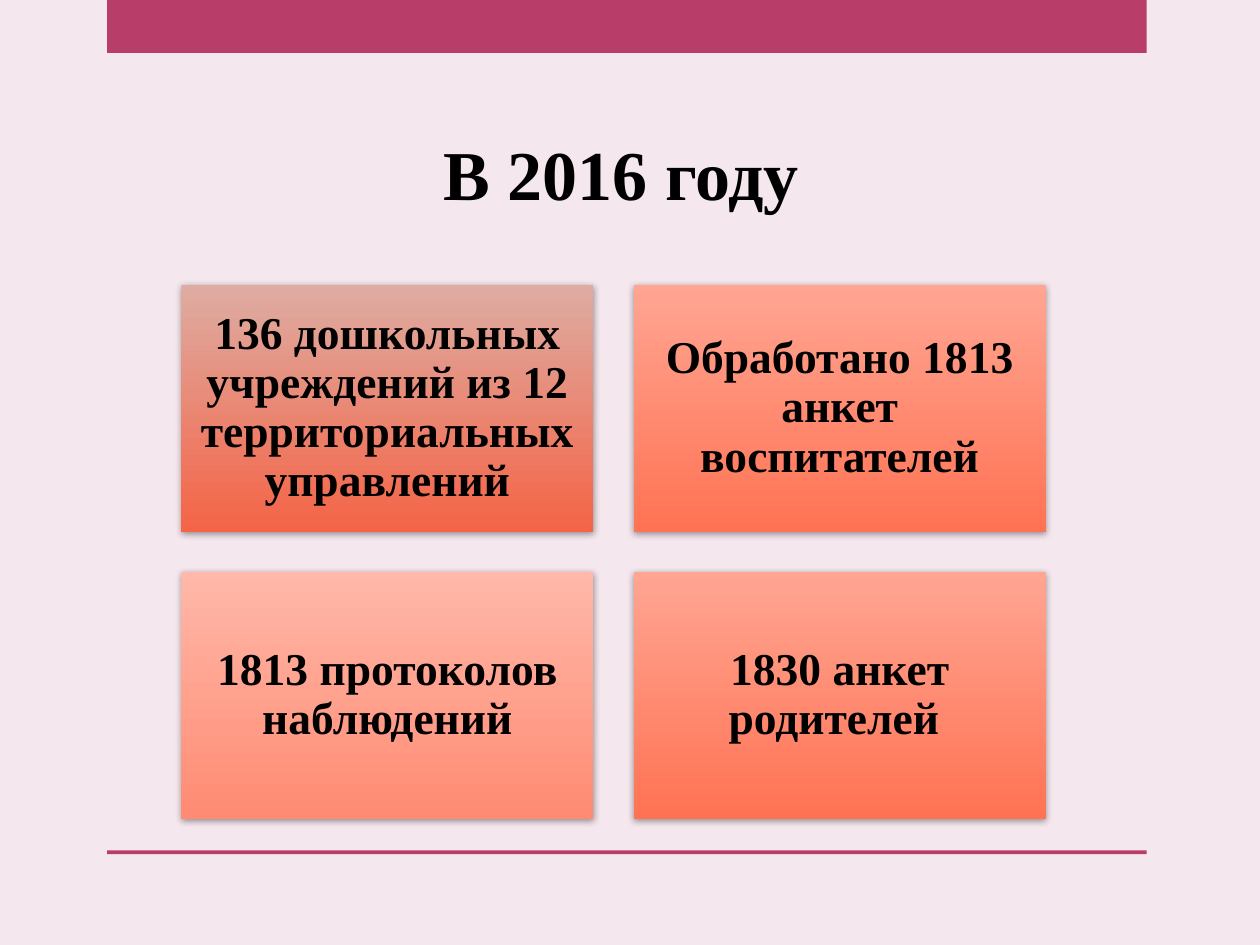
import pptx
import pptx.util
import pptx.dml.color
import pptx.enum.shapes
import pptx.enum.text
import pptx.oxml
import pptx.oxml.ns

Inches = pptx.util.Inches
Pt = pptx.util.Pt
RECTANGLE = pptx.enum.shapes.MSO_SHAPE.RECTANGLE
ANCHOR = pptx.enum.text.MSO_ANCHOR

COLORS = {
    "background": "F4E7ED",
    "accent": "B83D68",
    "text": "000000",
    "clay": ("DEACA2", "F46447"),
    "coral": ("FFA592", "FF7354"),
    "peach": ("FFB8A9", "FF8B73"),
}
SHADOW = (
    '<a:outerShdw xmlns:a="http://schemas.openxmlformats.org/drawingml/2006/main" '
    'blurRad="50800" dist="12700" dir="5280000" rotWithShape="0">'
    '<a:srgbClr val="000000"><a:alpha val="40000"/></a:srgbClr></a:outerShdw>'
)


def rgb(value):
    return pptx.dml.color.RGBColor.from_string(value)


def write(frame, wording, size):
    frame.word_wrap = True
    paragraph = frame.paragraphs[0]
    paragraph.alignment = pptx.enum.text.PP_ALIGN.CENTER
    run = paragraph.add_run()
    run.text = wording
    run.font.name = "Times New Roman"
    run.font.size = Pt(size)
    run.font.bold = True
    run.font.color.rgb = rgb(COLORS["text"])
    return paragraph


presentation = pptx.Presentation()
presentation.slide_width = Inches(10)
presentation.slide_height = Inches(7.5)
slide = presentation.slides.add_slide(presentation.slide_layouts[5])
slide.background.fill.solid()
slide.background.fill.fore_color.rgb = rgb(COLORS["background"])

for top, height in ((0, 0.42), (6.75, 0.03)):
    band = slide.shapes.add_shape(
        RECTANGLE, Inches(0.85), Inches(top), Inches(8.25), Inches(height)
    )
    band.shadow.inherit = False
    band.fill.solid()
    band.fill.fore_color.rgb = rgb(COLORS["accent"])
    band.line.fill.background()

heading = slide.shapes.title
heading.left, heading.top = Inches(1.22), Inches(0)
heading.width, heading.height = Inches(7.42), Inches(1.75)
heading.text_frame.vertical_anchor = ANCHOR.BOTTOM
write(heading.text_frame, "В 2016 году", 40)

results = [
    ("136 дошкольных учреждений из 12 территориальных управлений", "clay"),
    ("Обработано 1813 анкет воспитателей", "coral"),
    ("1813 протоколов наблюдений", "peach"),
    ("1830 анкет родителей ", "coral"),
]
grid_left, grid_top = 1.44, 2.26
card_width, card_height, gap = 3.27, 1.96, 0.32

for index, (wording, shade) in enumerate(results):
    row, column = divmod(index, 2)
    card = slide.shapes.add_shape(
        RECTANGLE,
        Inches(grid_left + column * (card_width + gap)),
        Inches(grid_top + row * (card_height + gap)),
        Inches(card_width),
        Inches(card_height),
    )
    card.fill.gradient()
    card.fill.gradient_angle = 270
    for stop, position, color in zip(card.fill.gradient_stops, (0, 1), COLORS[shade]):
        stop.position = position
        stop.color.rgb = rgb(color)
    card.line.fill.background()
    card.shadow.inherit = False
    effects = card.element.spPr.find(pptx.oxml.ns.qn("a:effectLst"))
    effects.append(pptx.oxml.parse_xml(SHADOW))

    frame = card.text_frame
    frame.margin_left = frame.margin_right = Inches(0.11)
    frame.margin_top = frame.margin_bottom = Inches(0.11)
    frame.vertical_anchor = ANCHOR.MIDDLE
    write(frame, wording, 26).line_spacing = 0.9

presentation.save("out.pptx")
